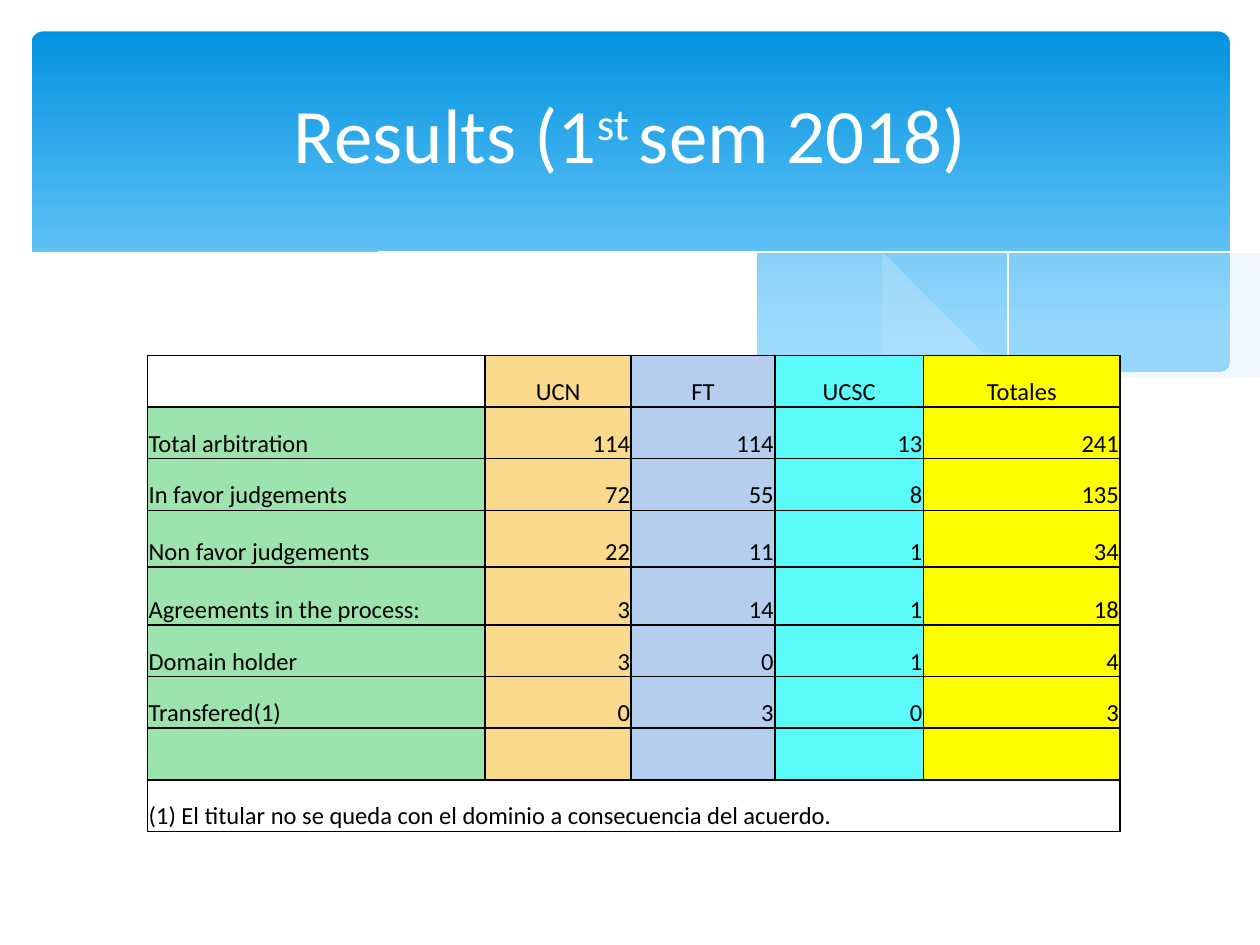
import pptx
import pptx.util
import pptx.dml.color
import pptx.enum.shapes
import pptx.enum.text
import pptx.oxml
import pptx.oxml.ns

Inches, Pt = pptx.util.Inches, pptx.util.Pt
RGB = pptx.dml.color.RGBColor
ALIGN = pptx.enum.text.PP_ALIGN
ANCHOR = pptx.enum.text.MSO_ANCHOR

WHITE, BLACK = RGB(255, 255, 255), RGB(0, 0, 0)
SKY_TOP, SKY_BOTTOM = RGB(0x02, 0x93, 0xE0), RGB(0x83, 0xD3, 0xFE)
MIST = RGB(0xC6, 0xE7, 0xFC)
GREEN, ORANGE = RGB(0x9D, 0xE3, 0xAE), RGB(0xF9, 0xD9, 0x8C)
BLUE, CYAN = RGB(0xB5, 0xCE, 0xED), RGB(0x5A, 0xFB, 0xF8)
YELLOW = RGB(0xFF, 0xFF, 0)

COLUMN_FILLS = [GREEN, ORANGE, BLUE, CYAN, YELLOW]
COLUMN_WIDTHS = [2.68, 1.16, 1.14, 1.18, 1.56]
ROW_HEIGHTS = [0.41, 0.41, 0.41, 0.45, 0.46, 0.41, 0.41, 0.41, 0.41]
RESULTS = [
    ["", "UCN", "FT", "UCSC", "Totales"],
    ["Total arbitration", "114", "114", "13", "241"],
    ["In favor judgements", "72", "55", "8", "135"],
    ["Non favor judgements", "22", "11", "1", "34"],
    ["Agreements in the process:", "3", "14", "1", "18"],
    ["Domain holder", "3", "0", "1", "4"],
    ["Transfered(1)", "0", "3", "0", "3"],
    ["", "", "", "", ""],
    ["(1) El titular no se queda con el dominio a consecuencia del acuerdo.",
     "", "", "", ""],
]

RIGHT_WAVE_TOP = [(9.76, 2), (9.35, 2.07), (8.61, 2.23), (7.79, 2.42),
                  (7.06, 2.57), (6.61, 2.65)]
RIGHT_WAVE_BOTTOM = [(6.61, 2.65), (7.05, 2.71), (7.57, 2.76), (8.14, 2.78),
                     (8.72, 2.74), (9.21, 2.65), (9.49, 2.57), (9.76, 2.47)]
LEFT_WAVE_TOP = [(8.93, 2.73), (8.07, 2.6), (7.06, 2.4), (6.29, 2.22),
                 (5.55, 2.05), (4.89, 1.94), (4.2, 1.87), (3.61, 1.85),
                 (3.13, 1.88), (2.86, 1.91)]
LEFT_WAVE_BOTTOM = [(2.86, 1.91), (3.62, 2.03), (4.49, 2.22), (5.3, 2.4),
                    (6.01, 2.55), (6.8, 2.68), (7.48, 2.76), (8.07, 2.78),
                    (8.57, 2.77), (8.93, 2.73)]
FALLING_LINE = [(3.09, 1.95), (3.44, 1.9), (4.01, 1.87), (4.69, 1.89),
                (5.56, 1.97), (6.36, 2.08), (7.27, 2.26), (8.31, 2.51),
                (9.07, 2.72)]
RISING_LINE = [(6.13, 2.57), (6.95, 2.35), (7.76, 2.16), (8.66, 1.99),
               (9.24, 1.9), (9.75, 1.85)]
WHITE_WAVE = [(9.77, 2.46), (9.4, 2.59), (8.99, 2.69), (8.5, 2.75),
              (8.09, 2.77), (7.44, 2.74), (6.68, 2.65), (5.79, 2.5),
              (5.03, 2.33), (4.47, 2.2), (3.65, 2.02), (2.92, 1.9),
              (2.3, 1.85), (1.77, 1.84), (1.32, 1.86), (0.95, 1.91),
              (0.59, 1.99), (0.36, 2.07), (0.23, 2.13)]


def smooth(points, steps=5):
    """Return a Catmull-Rom curve through the points."""
    padded = [points[0]] + points + [points[-1]]
    curve = [points[0]]
    for a, b, c, d in zip(padded, padded[1:], padded[2:], padded[3:]):
        for t in (i / steps for i in range(1, steps + 1)):
            curve.append(tuple(
                (2 * q + (r - p) * t + (2 * p - 5 * q + 4 * r - s) * t ** 2
                 + (3 * q - p - 3 * r + s) * t ** 3) / 2
                for p, q, r, s in zip(a, b, c, d)))
    return curve


def add_outline(slide, points, fill=None, opacity=100, line=None):
    """Draw a filled area, or an open line when no fill is given."""
    builder = slide.shapes.build_freeform(
        *points[0], scale=float(Inches(1)))
    builder.add_line_segments(points[1:], close=fill is not None)
    sp = builder.convert_to_shape()
    sp.shadow.inherit = False
    if fill is None:
        sp.fill.background()
    else:
        sp.fill.solid()
        sp.fill.fore_color.rgb = fill
        if opacity < 100:
            color = sp.fill._xPr.find(".//" + pptx.oxml.ns.qn("a:srgbClr"))
            alpha = color.makeelement(pptx.oxml.ns.qn("a:alpha"),
                                      {"val": str(opacity * 1000)})
            color.append(alpha)
    if line is None:
        sp.line.fill.background()
    else:
        sp.line.color.rgb = line
        sp.line.width = Pt(0)


def add_banner(slide):
    """Draw the rounded gradient banner."""
    sp = slide.shapes.add_shape(
        pptx.enum.shapes.MSO_SHAPE.ROUNDED_RECTANGLE,
        Inches(0.25), Inches(0.25), Inches(9.51), Inches(2.7))
    sp.adjustments[0] = 0.034
    sp.shadow.inherit = False
    sp.line.fill.background()
    sp.fill.gradient()
    sp.fill.gradient_angle = 270
    stops = zip(sp.fill.gradient_stops, [(0, SKY_TOP), (0.9, SKY_BOTTOM)])
    for stop, (position, color) in stops:
        stop.position = position
        stop.color.rgb = color


def add_text(p, text, size=14, color=BLACK, align=ALIGN.LEFT, baseline=0):
    """Add a formatted run to a paragraph."""
    p.alignment = align
    r = p.add_run()
    r.text = text
    r.font.name = "Calibri"
    r.font.size = Pt(size)
    r.font.color.rgb = color
    if baseline:
        r._r.get_or_add_rPr().set("baseline", str(baseline * 1000))


def add_title(slide):
    """Add the title with its superscript ordinal."""
    tf = slide.shapes.add_textbox(
        Inches(0.5), Inches(0.37), Inches(9), Inches(1.37)).text_frame
    tf.word_wrap = True
    tf.vertical_anchor = ANCHOR.MIDDLE
    for text, baseline in [("Results (1", 0), ("st ", 30), ("sem 2018)", 0)]:
        add_text(tf.paragraphs[0], text, size=44, color=WHITE,
                 align=ALIGN.CENTER, baseline=baseline)


def add_borders(cell):
    """Give a cell thin black borders on all sides."""
    tcPr = cell._tc.get_or_add_tcPr()
    for side in "LRTB":
        tcPr.append(pptx.oxml.parse_xml(
            f'<a:ln{side} {pptx.oxml.ns.nsdecls("a")} w="12700"><a:solidFill>'
            f'<a:srgbClr val="{BLACK}"/></a:solidFill></a:ln{side}>'))


def format_cell(cell, text, fill, align):
    """Set the text, borders and fill of a table cell."""
    cell.margin_left = cell.margin_right = cell.margin_top = Inches(0.01)
    cell.margin_bottom = 0
    cell.vertical_anchor = ANCHOR.BOTTOM
    add_borders(cell)
    if fill is None:
        cell.fill.background()
    else:
        cell.fill.solid()
        cell.fill.fore_color.rgb = fill
    if text:
        add_text(cell.text_frame.paragraphs[0], text, align=align)


def add_results_table(slide):
    """Add the arbitration results with the footnote row."""
    table = slide.shapes.add_table(
        len(RESULTS), len(COLUMN_WIDTHS), Inches(1.17), Inches(2.82),
        Inches(sum(COLUMN_WIDTHS)), Inches(sum(ROW_HEIGHTS))).table
    table.first_row = table.horz_banding = False
    for column, width in zip(table.columns, COLUMN_WIDTHS):
        column.width = Inches(width)
    for row, height in zip(table.rows, ROW_HEIGHTS):
        row.height = Inches(height)
    last = len(RESULTS) - 1
    table.cell(last, 0).merge(table.cell(last, len(COLUMN_WIDTHS) - 1))
    for i, values in enumerate(RESULTS):
        for j, text in enumerate(values):
            plain = i == last or (i, j) == (0, 0)
            align = (ALIGN.LEFT if j == 0 else
                     ALIGN.CENTER if i == 0 else ALIGN.RIGHT)
            format_cell(table.cell(i, j), text,
                        None if plain else COLUMN_FILLS[j], align)


def main():
    """Build the results slide."""
    prs = pptx.Presentation()
    prs.slide_width, prs.slide_height = Inches(10), Inches(7.5)
    slide = prs.slides.add_slide(prs.slide_layouts[6])
    add_banner(slide)
    add_outline(slide, smooth(RIGHT_WAVE_TOP) + smooth(RIGHT_WAVE_BOTTOM),
                fill=MIST, opacity=29)
    add_outline(slide, smooth(LEFT_WAVE_TOP) + smooth(LEFT_WAVE_BOTTOM),
                fill=MIST, opacity=40)
    for points in (FALLING_LINE, RISING_LINE):
        add_outline(slide, smooth(points), line=WHITE)
    add_outline(slide, smooth(WHITE_WAVE) + [(0.23, 3.29), (9.77, 3.29)],
                fill=WHITE)
    add_title(slide)
    add_results_table(slide)
    prs.save("out.pptx")


if __name__ == "__main__":
    main()
